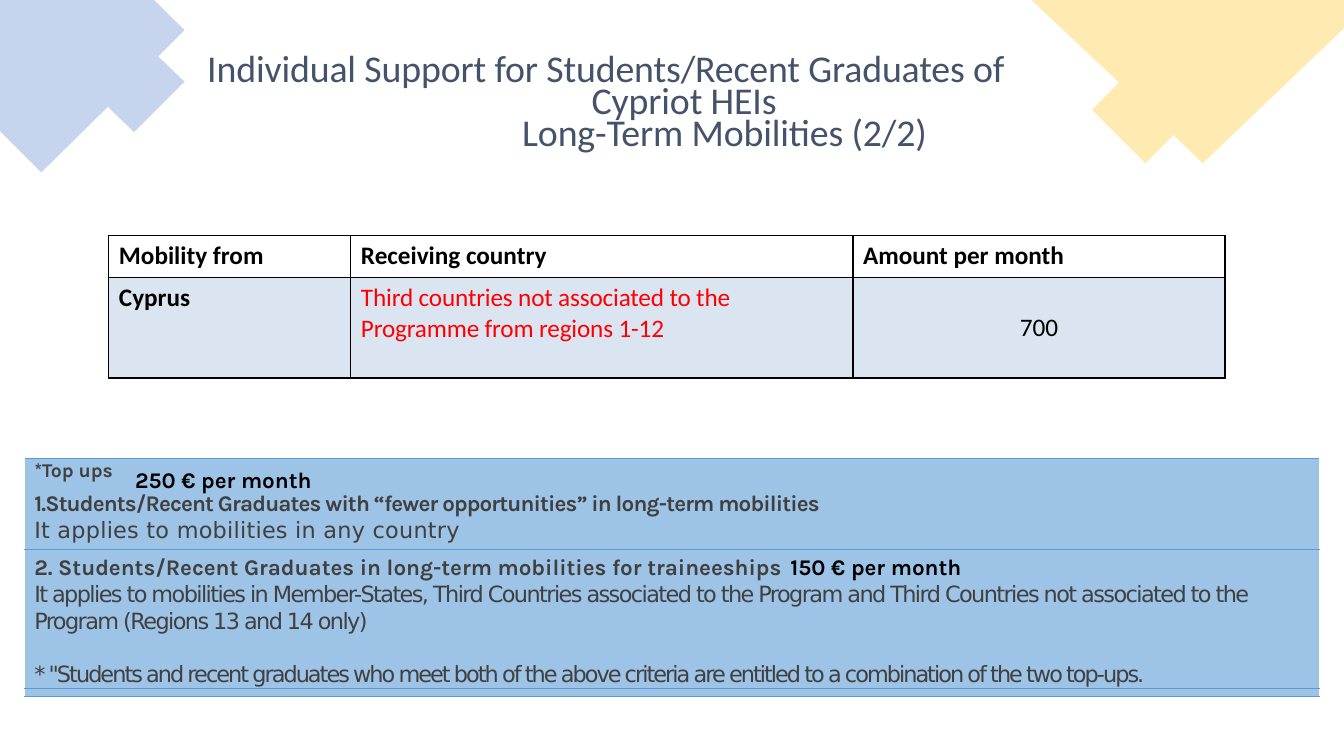
"""Build the slide on individual support for long-term mobilities."""
from lxml import etree
from pptx import Presentation
from pptx import util as u
from pptx.dml.color import RGBColor
from pptx.enum import text
from pptx.oxml import ns

THEME = {
    "title": "44536A", "ink": "000000", "muted": "404040", "alert": "FF0000",
    "left corner": "4471C4", "right corner": "FFC000", "row tint": "4F81BD",
    "top-up fill": "9DC3E6", "top-up rule": "5B9BD4",
    "title size": 27, "grid size": 18, "top-up size": 16, "raised size": 24,
}
TITLE = [("Individual Support for Students/Recent Graduates of Cypriot HEIs", 1.57, -1.56),
         ("Long-Term Mobilities (2/2)", 2.37, 0)]
CORNERS = {
    "left corner": [(1.83, 0.3), (1.53, 0), (0, 0), (0, 1.3), (0.41, 1.71), (1.07, 1.06),
                    (1.33, 1.31), (1.83, 0.81), (1.57, 0.56)],
    "right corner": [(13.33, 0), (10.23, 0), (11.1, 0.82), (10.83, 1.09), (11.36, 1.62),
                     (11.64, 1.34), (11.93, 1.62), (13.33, 0.28)],
}
AMOUNTS = [["Mobility from", "Receiving country", "Amount per month"],
           ["Cyprus", "Third countries not associated to the Programme from regions 1-12", "700"]]
HEADING, BODY = ("Karla", True), ("DejaVu Sans", False)
TOP_UPS = [
    {"height": 0.9, "inset": 0.18, "lines": [
        (14.4, 0, 9.32, HEADING, 0, ["*Top ups\t", "250 € per month"]),
        (14.3, 0, None, HEADING, -0.6,
         ["1.Students/Recent Graduates with “fewer opportunities” in long-term mobilities"]),
        (19.1, 0, None, BODY, 0.2, ["It applies to mobilities in any country"])]},
    {"height": 1.38, "inset": 0.05, "lines": [
        (19.1, 0, 8.61, HEADING, 0,
         ["2. Students/Recent Graduates in long-term mobilities for traineeships\t",
          "150 € per month"]),
        (19.1, 0, None, BODY, -1.1,
         ["It applies to mobilities in Member-States, Third Countries associated to the Program "
          "and Third Countries not associated to the Program (Regions 13 and 14 only)"]),
        (19.1, 19.1, None, BODY, -1.4,
         ["* \"Students and recent graduates who meet both of the above criteria are entitled "
          "to a combination of the two top-ups."])]},
    {"height": 0.08, "inset": 0, "lines": []},
]


def colour(name):
    return RGBColor.from_string(THEME[name])


def tint(fill, name, percent):
    fill.solid()
    fill.fore_color.rgb = colour(name)
    choice = fill._xPr.find(ns.qn("a:solidFill"))[0]
    etree.SubElement(choice, ns.qn("a:alpha")).set("val", str(percent * 1000))


def style(span, font, size, ink, bold=False, spacing=0):
    span.font.name, span.font.size, span.font.bold = font, u.Pt(size), bold
    span.font.color.rgb = colour(ink)
    span._r.get_or_add_rPr().set("spc", str(round(spacing * 100)))


def indent(para, left, first=0):
    properties = para._p.get_or_add_pPr()
    properties.set("marL", str(u.Inches(left)))
    properties.set("indent", str(u.Inches(first)))
    return properties


def border(cell, sides, name):
    properties = cell._tc.get_or_add_tcPr()
    for place, side in enumerate(sides):
        line = etree.Element(ns.qn("a:ln" + side), w=str(u.Pt(1)))
        fill = etree.SubElement(line, ns.qn("a:solidFill"))
        etree.SubElement(fill, ns.qn("a:srgbClr")).set("val", THEME[name])
        properties.insert(place, line)


def add_grid(page, left, top, widths, heights):
    frame = page.shapes.add_table(len(heights), len(widths), u.Inches(left), u.Inches(top),
                                  u.Inches(sum(widths)), u.Inches(sum(heights)))
    grid = frame.table
    grid.first_row = grid.horz_banding = False
    for column, width in zip(grid.columns, widths):
        column.width = u.Inches(width)
    for row, height in zip(grid.rows, heights):
        row.height = u.Inches(height)
    return grid


def add_corner(page, name, points):
    points = [(u.Inches(x), u.Inches(y)) for x, y in points]
    builder = page.shapes.build_freeform(*points[0])
    builder.add_line_segments(points[1:], close=True)
    corner = builder.convert_to_shape()
    corner.shadow.inherit = False
    corner.line.fill.background()
    tint(corner.fill, name, 30)


def add_title(page):
    title = page.shapes.title
    title.left, title.top, title.width, title.height = map(u.Inches, (1.5, 0.42, 9, 1.12))
    frame = title.text_frame
    frame.text = "\n".join(line for line, _, _ in TITLE)
    frame.word_wrap, frame.auto_size = True, text.MSO_AUTO_SIZE.NONE
    frame.vertical_anchor = text.MSO_ANCHOR.TOP
    frame.margin_left = frame.margin_right = frame.margin_bottom = 0
    frame.margin_top = u.Inches(0.15)
    for para, (_, left, first) in zip(frame.paragraphs, TITLE):
        indent(para, left, first)
        para.alignment = text.PP_ALIGN.CENTER
        para.line_spacing, para.space_before = 0.7, u.Pt(0)
        style(para.runs[0], "Calibri", THEME["title size"], "title", spacing=-0.1)


def add_amounts(page):
    grid = add_grid(page, 1.08, 2.34, [2.4, 4.98, 3.69], [0.41, 1])
    for y, row in enumerate(AMOUNTS):
        for x, words in enumerate(row):
            cell = grid.cell(y, x)
            cell.text = words
            para = cell.text_frame.paragraphs[0]
            country, amount = y == 1 and x == 1, y == 1 and x == 2
            style(para.runs[0], "Calibri", THEME["grid size"], "alert" if country else "ink",
                  not (country or amount), -0.1 if country else 0)
            if amount:
                para.alignment = text.PP_ALIGN.CENTER
                cell.vertical_anchor = text.MSO_ANCHOR.MIDDLE
            if y:
                tint(cell.fill, "row tint", 20)
            else:
                cell.fill.background()
            border(cell, "LRTB", "ink")


def add_top_ups(page):
    grid = add_grid(page, 0.24, 4.55, [12.85], [row["height"] for row in TOP_UPS])
    for y, row in enumerate(TOP_UPS):
        cell = grid.cell(y, 0)
        cell.margin_left = cell.margin_right = cell.margin_bottom = 0
        cell.margin_top = u.Inches(row["inset"])
        cell.fill.solid()
        cell.fill.fore_color.rgb = colour("top-up fill")
        border(cell, "TB", "top-up rule")
        frame = cell.text_frame
        for place, (pitch, before, tab, (font, bold), spacing, parts) in enumerate(row["lines"]):
            para = frame.add_paragraph() if place else frame.paragraphs[0]
            properties = indent(para, 0.1)
            para.line_spacing, para.space_before = u.Pt(pitch), u.Pt(before)
            if tab:
                stops = etree.SubElement(properties, ns.qn("a:tabLst"))
                etree.SubElement(stops, ns.qn("a:tab"), pos=str(u.Inches(tab)), algn="l")
            for part, words in enumerate(parts):
                span = para.add_run()
                span.text = words
                style(span, font, THEME["top-up size"], "ink" if part else "muted", bold, spacing)
                if words.startswith("*Top"):
                    span.font.size = u.Pt(THEME["raised size"])
                    span._r.get_or_add_rPr().set("baseline", "33000")
        if not row["lines"]:
            etree.SubElement(frame.paragraphs[0]._p, ns.qn("a:endParaRPr"), sz="100")


def main():
    deck = Presentation()
    deck.slide_width, deck.slide_height = u.Inches(13.33), u.Inches(7.5)
    page = deck.slides.add_slide(deck.slide_layouts[5])
    for name, points in CORNERS.items():
        add_corner(page, name, points)
    add_title(page)
    add_amounts(page)
    add_top_ups(page)
    deck.save("out.pptx")


if __name__ == "__main__":
    main()
